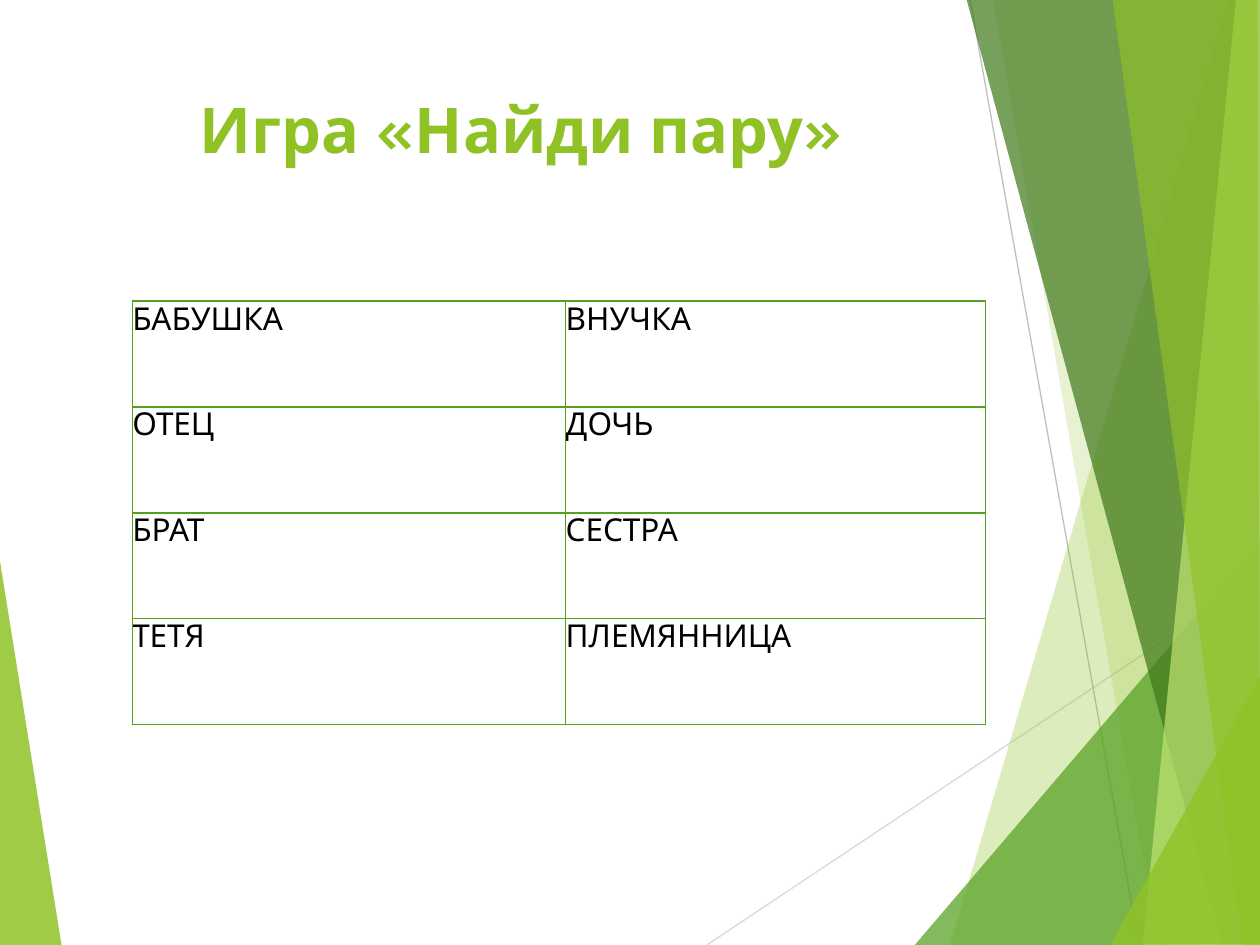
import pptx
import pptx.util
import pptx.enum.shapes
import pptx.enum.text
import pptx.oxml
import pptx.oxml.ns
from pptx.dml.color import RGBColor
from lxml import etree

Inches, Pt = pptx.util.Inches, pptx.util.Pt
qn = pptx.oxml.ns.qn

LIME = RGBColor(0x90, 0xC2, 0x26)
GREEN = RGBColor(0x54, 0xA0, 0x21)
DARK = RGBColor(0x3F, 0x78, 0x19)
PALE = RGBColor(0xC0, 0xE4, 0x74)
GREY = RGBColor(0xBF, 0xBF, 0xBF)
LIGHT = RGBColor(0xD9, 0xD9, 0xD9)
BLACK = RGBColor(0, 0, 0)
FONT = "Karla"

# Content
TITLE = "Игра «Найди пару»"
PAIRS = [
    ("БАБУШКА", "ВНУЧКА"),
    ("ОТЕЦ", "ДОЧЬ"),
    ("БРАТ", "СЕСТРА"),
    ("ТЕТЯ", "ПЛЕМЯННИЦА"),
]
COLS = (3.44, 3.33)
ROW = 0.84

# Backdrop: colour, opacity in percent, corners
LEFT = (LIME, 85, [(-0.01, 4.39), (0.49, 7.51), (-0.01, 7.5)])
LINES = [
    (LIGHT, (5.61, 7.5), (10.01, 4.57)),
    (GREY, (7.7, 0), (9.04, 7.5)),
]
SHARDS = [
    (LIME, 30, [(9.75, 0), (7.54, 7.5), (10.02, 7.51), (10.01, 0.01)]),
    (LIME, 20, [(7.88, -0.01), (9.19, 7.5), (10.01, 7.5), (10.01, -0.01)]),
    (GREEN, 72, [(7.26, 7.5), (10, 4.29), (10.01, 7.5)]),
    (DARK, 70, [(7.67, -0.01), (9.7, 7.5), (10.01, 7.49), (10.01, -0.01)]),
    (PALE, 70, [(9.81, -0.01), (9.07, 7.5), (10.01, 7.5), (10, -0.01)]),
    (LIME, 65, [(8.83, -0.01), (9.86, 7.5), (10, 7.5), (9.98, -0.01)]),
    (LIME, 80, [(8.81, 7.5), (10.01, 5.35), (10.01, 7.49)]),
]


def add_shard(shapes, color, alpha, points):
    start, *rest = [(Inches(x), Inches(y)) for x, y in points]
    pen = shapes.build_freeform(*start)
    pen.add_line_segments(rest, close=True)
    shard = pen.convert_to_shape()
    shard.shadow.inherit = False
    shard.fill.solid()
    shard.fill.fore_color.rgb = color
    shard.line.fill.background()
    tint = shard.fill._xPr.find(".//" + qn("a:srgbClr"))
    etree.SubElement(tint, qn("a:alpha"), val=str(alpha * 1000))


def add_line(shapes, color, start, end):
    line = shapes.add_connector(
        pptx.enum.shapes.MSO_CONNECTOR.STRAIGHT,
        *[Inches(v) for v in start + end])
    line.line.color.rgb = color
    line.line.width = Pt(0.75)
    etree.SubElement(line._element.spPr, qn("a:effectLst"))


def style(frame, size, color, bold=False):
    frame.margin_left = frame.margin_right = 0
    for run in frame.paragraphs[0].runs:
        run.font.name = FONT
        run.font.size = Pt(size)
        run.font.bold = bold
        run.font.color.rgb = color


def add_border(cell, color):
    props = cell._tc.get_or_add_tcPr()
    for spot, side in enumerate(("a:lnL", "a:lnR", "a:lnT", "a:lnB")):
        edge = etree.Element(qn(side), w=str(Pt(1)))
        fill = etree.SubElement(edge, qn("a:solidFill"))
        etree.SubElement(fill, qn("a:srgbClr"), val=str(color))
        props.insert(spot, edge)


def main():
    deck = pptx.Presentation()
    deck.slide_width, deck.slide_height = Inches(10), Inches(7.5)
    shapes = deck.slides.add_slide(deck.slide_layouts[6]).shapes

    # Backdrop
    add_shard(shapes, *LEFT)
    for line in LINES:
        add_line(shapes, *line)
    for shard in SHARDS:
        add_shard(shapes, *shard)

    # Title
    box = shapes.add_textbox(
        Inches(0.67), Inches(0.67), Inches(6.94), Inches(1.44))
    frame = box.text_frame
    frame.word_wrap = True
    frame.text = TITLE
    frame.paragraphs[0].alignment = pptx.enum.text.PP_ALIGN.CENTER
    style(frame, 36, LIME, True)

    # Table of pairs
    table = shapes.add_table(
        len(PAIRS), len(COLS), Inches(1.05), Inches(2.39),
        Inches(sum(COLS)), Inches(ROW * len(PAIRS))).table
    table.first_row = table.horz_banding = False
    for col, width in zip(table.columns, COLS):
        col.width = Inches(width)
    for row, pair in zip(table.rows, PAIRS):
        row.height = Inches(ROW)
        for cell, word in zip(row.cells, pair):
            cell.text_frame.text = word
            style(cell.text_frame, 18, BLACK)
            cell.margin_left = cell.margin_right = 0
            cell.margin_top = cell.margin_bottom = 0
            cell.fill.background()
            add_border(cell, GREEN)

    deck.save("out.pptx")


if __name__ == "__main__":
    main()
